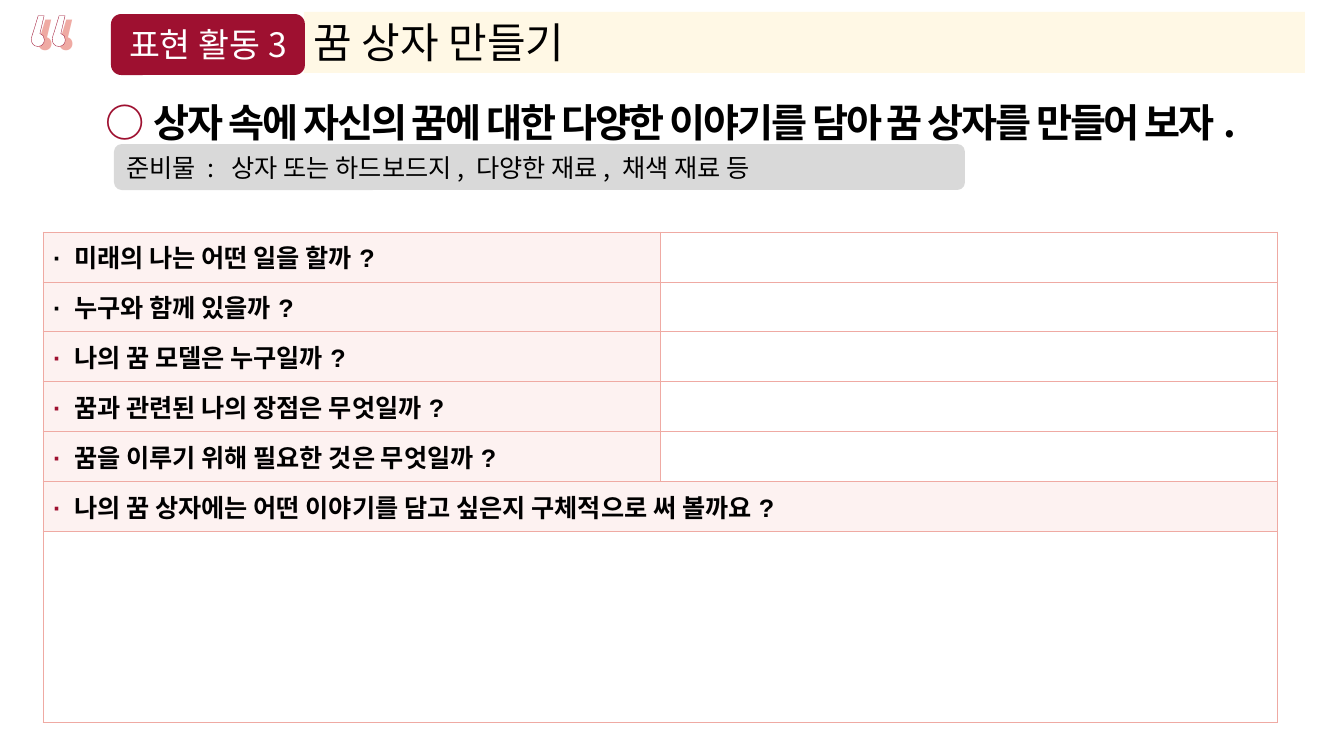
from lxml import etree
from pptx import Presentation, util as u
from pptx.dml.color import RGBColor
from pptx.enum import shapes, text
from pptx.oxml.ns import qn

PX = 914400 / 100.8
KOREAN = "Noto Sans CJK KR"
RED, PINK, PALE = "9E1030", "EFAAA3", "FDF2F1"
BLACK, WHITE = "000000", "FFFFFF"
QUESTIONS = [
    ("미래의 나는 어떤 일을 할까?", BLACK),
    ("누구와 함께 있을까?", BLACK),
    ("나의 꿈 모델은 누구일까?", RED),
    ("꿈과 관련된 나의 장점은 무엇일까?", RED),
    ("꿈을 이루기 위해 필요한 것은 무엇일까?", RED),
    ("나의 꿈 상자에는 어떤 이야기를 담고 싶은지 구체적으로 써 볼까요?", RED),
]


def px(*lengths):
    return [u.Emu(round(length * PX)) for length in lengths]


def color(hex_string):
    return RGBColor.from_string(hex_string)


def add_line(parent, tag, hex_string, points, position):
    line = etree.Element(qn(tag), w=str(u.Pt(points)))
    fill = etree.SubElement(line, qn("a:solidFill"))
    etree.SubElement(fill, qn("a:srgbClr"), val=hex_string)
    parent.insert(position, line)


def add_span(para, words, size, ink=BLACK, font=KOREAN, east=KOREAN,
             bold=False, spacing=None, outline=None):
    span = para.add_run()
    span.text = words
    span.font.size = u.Pt(size)
    span.font.name = font
    span.font.bold = bold
    span.font.color.rgb = color(ink)
    props = span.font._element
    props.find(qn("a:latin")).addnext(etree.Element(qn("a:ea"), typeface=east))
    if spacing is not None:
        props.set("spc", str(round(spacing * 100)))
    if outline:
        add_line(props, "a:ln", outline, 1, 0)


def first_para(box, align=text.PP_ALIGN.LEFT, anchor=text.MSO_ANCHOR.TOP):
    frame = box.text_frame
    frame.word_wrap = True
    frame.vertical_anchor = anchor
    para = frame.paragraphs[0]
    para.alignment = align
    return para


def add_panel(page, kind, place, fill, words, size, ink=BLACK, **layout):
    panel = page.shapes.add_shape(kind, *px(*place))
    panel.shadow.inherit = False
    panel.fill.solid()
    panel.fill.fore_color.rgb = color(fill)
    panel.line.fill.background()
    add_span(first_para(panel, **layout), words, size, ink)


def add_quote(page, left, top, ink, outline=None):
    box = page.shapes.add_textbox(*px(left, top, 80, 159))
    add_span(first_para(box), "“", 88, ink, "Montserrat", "Montserrat", outline=outline)


def add_heading(page):
    box = page.shapes.add_textbox(*px(96, 70, 1179, 75))
    para = first_para(box)
    para.line_spacing = 1.5
    add_span(para, "○ ", 28, RED, bold=True)
    add_span(para, "상자 속에 자신의 꿈에 대한 다양한 이야기를 담아 꿈 상자를 만들어 보자.",
             28, bold=True, spacing=-1.5)


def style_cell(cell, fill):
    cell.vertical_anchor = text.MSO_ANCHOR.MIDDLE
    if fill:
        cell.fill.solid()
        cell.fill.fore_color.rgb = color(fill)
    else:
        cell.fill.background()
    props = cell._tc.get_or_add_tcPr()
    for position, side in enumerate("LRTB"):
        add_line(props, f"a:ln{side}", PINK, 0.75, position)


def add_question_table(page):
    """Questions on the left, blank answers; the last question and answer span both columns."""
    heights = [50] * len(QUESTIONS) + [191]
    table = page.shapes.add_table(len(heights), 2, *px(43, 232, 1234, sum(heights))).table
    table.first_row = table.horz_banding = False
    last = len(QUESTIONS) - 1
    for index, height in enumerate(heights):
        table.rows[index].height = px(height)[0]
        question, answer = table.cell(index, 0), table.cell(index, 1)
        style_cell(question, PALE if index <= last else None)
        style_cell(answer, PALE if index == last else None)
        if index >= last:
            question.merge(answer)
    for index, (words, dot) in enumerate(QUESTIONS):
        para = table.cell(index, 0).text_frame.paragraphs[0]
        add_span(para, "· ", 18, dot, "Arial", bold=True)
        add_span(para, words, 18, BLACK, "Arial", bold=True)


def main():
    deck = Presentation()
    deck.slide_width, deck.slide_height = px(1344, 756)
    page = deck.slides.add_slide(deck.slide_layouts[6])
    kind, middle = shapes.MSO_SHAPE, text.MSO_ANCHOR.MIDDLE
    add_panel(page, kind.RECTANGLE, (304, 12, 1001, 61), "FFF8E5", "꿈 상자 만들기", 30)
    add_quote(page, 23, -17, PINK)
    add_quote(page, 15, -21, WHITE, outline=RED)
    add_panel(page, kind.ROUNDED_RECTANGLE, (111, 14, 194, 61), RED, "표현 활동3", 24, WHITE,
              align=text.PP_ALIGN.CENTER, anchor=middle)
    add_heading(page)
    add_panel(page, kind.ROUNDED_RECTANGLE, (114, 144, 851, 46), "D9D9D9",
              "준비물 :  상자 또는 하드보드지, 다양한 재료, 채색 재료 등", 18,
              align=text.PP_ALIGN.JUSTIFY, anchor=middle)
    add_question_table(page)
    deck.save("out.pptx")


if __name__ == "__main__":
    main()
